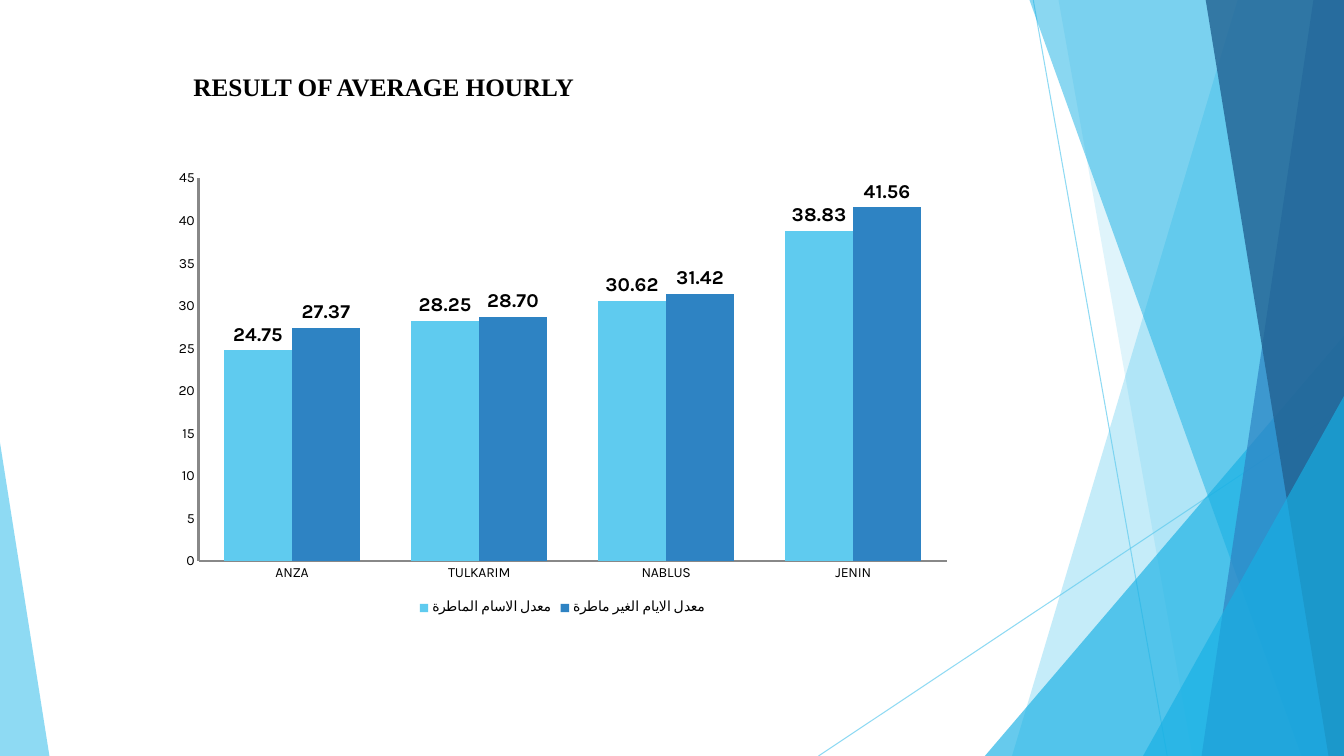
from dataclasses import dataclass

from pptx import Presentation
from pptx.chart.data import CategoryChartData
from pptx.dml.color import RGBColor
from pptx.enum.chart import XL_CHART_TYPE as ChartType
from pptx.enum.chart import XL_LABEL_POSITION as LabelPosition
from pptx.enum.chart import XL_LEGEND_POSITION as LegendPosition
from pptx.enum.chart import XL_TICK_MARK as TickMark
from pptx.enum.shapes import MSO_CONNECTOR as Connector
from pptx.enum.shapes import MSO_SHAPE as Shape
from pptx.enum.text import MSO_AUTO_SIZE as AutoSize
from pptx.oxml.ns import qn
from pptx.oxml.xmlchemy import BaseOxmlElement
from pptx.shapes.autoshape import Shape as AutoShape
from pptx.slide import Slide
from pptx.util import Emu, Inches, Pt

SKY = RGBColor(0x5F, 0xCB, 0xEF)
CYAN = RGBColor(0x17, 0xB0, 0xE4)
BLUE = RGBColor(0x2E, 0x83, 0xC3)
NAVY = RGBColor(0x22, 0x62, 0x92)
GRAY = RGBColor(0x88, 0x88, 0x88)
BLACK = RGBColor(0, 0, 0)

WIDTH, HEIGHT = Inches(13.33), Inches(7.5)
TITLE_FONT, CHART_FONT = "Times New Roman", "Karla"


@dataclass(frozen=True)
class Ray:
    start: tuple[float, float]
    end: tuple[float, float]


@dataclass(frozen=True)
class Facet:
    top_left: float
    bottom_left: float
    color: RGBColor
    opacity: int


@dataclass(frozen=True)
class Corner:
    left: float
    top: float
    width: float
    apex: float
    color: RGBColor
    opacity: int


@dataclass(frozen=True)
class Series:
    name: str
    values: tuple[float, ...]
    color: RGBColor


RAYS = (Ray((76.88, 0), (86.85, 100)), Ray((100, 53.73), (60.9, 100)))
PANELS = (
    Facet(92.1, 75.3, SKY, 36),
    Facet(78.75, 88.73, SKY, 20),
    Corner(73.28, 44.4, 26.72, 1, CYAN, 66),
    Facet(76.58, 96.83, CYAN, 50),
    Facet(97.73, 89.4, BLUE, 70),
    Facet(89.7, 98.85, NAVY, 80),
    Corner(85.05, 52.4, 14.95, 1, CYAN, 66),
    Corner(0, 58.53, 3.68, 0, SKY, 70),
)
CITIES = ("ANZA", "TULKARIM", "NABLUS", "JENIN")
SERIES = (
    Series("معدل الاسام الماطرة", (24.75, 28.25, 30.62, 38.83), SKY),
    Series("معدل الايام الغير ماطرة", (27.37, 28.7, 31.42, 41.56), BLUE),
)


def across(percent: float) -> Emu:
    return Emu(round(WIDTH * percent / 100))


def down(percent: float) -> Emu:
    return Emu(round(HEIGHT * percent / 100))


def set_opacity(element: BaseOxmlElement, percent: int) -> None:
    for color in element.iter(qn("a:srgbClr")):
        color.makeelement(qn("a:alpha"))
        alpha = color.makeelement(qn("a:alpha"), {"val": str(percent * 1000)})
        color.append(alpha)


def draw_ray(slide: Slide, ray: Ray) -> None:
    line = slide.shapes.add_connector(
        Connector.STRAIGHT,
        across(ray.start[0]), down(ray.start[1]),
        across(ray.end[0]), down(ray.end[1]),
    )
    line.line.color.rgb = SKY
    line.line.width = Pt(0.75)
    set_opacity(line.element, 70)
    properties = line.element.spPr
    properties.append(properties.makeelement(qn("a:effectLst")))


def add_facet(slide: Slide, facet: Facet) -> AutoShape:
    top, bottom = down(-0.1), down(100)
    builder = slide.shapes.build_freeform(across(facet.top_left), top)
    builder.add_line_segments(
        [(WIDTH, top), (WIDTH, bottom), (across(facet.bottom_left), bottom)],
        close=True,
    )
    return builder.convert_to_shape()


def add_corner(slide: Slide, corner: Corner) -> AutoShape:
    shape = slide.shapes.add_shape(
        Shape.ISOSCELES_TRIANGLE,
        across(corner.left), down(corner.top),
        across(corner.width), down(100 - corner.top),
    )
    shape.adjustments[0] = corner.apex
    return shape


def draw_panel(slide: Slide, panel: Facet | Corner) -> None:
    add = add_facet if isinstance(panel, Facet) else add_corner
    shape = add(slide, panel)
    shape.shadow.inherit = False
    shape.fill.solid()
    shape.fill.fore_color.rgb = panel.color
    shape.line.fill.background()
    set_opacity(shape.element, panel.opacity)


def draw_title(slide: Slide) -> None:
    box = slide.shapes.add_textbox(across(13.65), down(7.6), across(30.15), down(6.53))
    frame = box.text_frame
    frame.word_wrap = False
    frame.auto_size = AutoSize.SHAPE_TO_FIT_TEXT
    para = frame.paragraphs[0]
    para.text = "RESULT OF AVERAGE HOURLY"
    para.line_spacing = Pt(28)
    para.space_after = Pt(12)
    para.font.name = TITLE_FONT
    para.font.size = Pt(18)
    para.font.bold = True
    para.font.color.rgb = BLACK


def draw_chart(slide: Slide) -> None:
    data = CategoryChartData(number_format="General")
    data.categories = CITIES
    for series in SERIES:
        data.add_series(series.name, series.values)
    chart = slide.shapes.add_chart(
        ChartType.COLUMN_CLUSTERED,
        across(12.08), down(21.33), across(59.55), down(60.53), data,
    ).chart
    chart.has_title = False
    chart.font.name = CHART_FONT
    chart.font.size = Pt(10)
    chart.font.color.rgb = BLACK
    chart.has_legend = True
    chart.legend.position = LegendPosition.BOTTOM
    chart.legend.include_in_layout = False

    for axis in (chart.category_axis, chart.value_axis):
        axis.major_tick_mark = TickMark.NONE
        axis.minor_tick_mark = TickMark.NONE
        axis.has_major_gridlines = False
        axis.format.line.color.rgb = GRAY
        axis.format.line.width = Pt(1.5)
    chart.value_axis.minimum_scale = 0
    chart.value_axis.maximum_scale = 45
    chart.value_axis.major_unit = 5

    plot = chart.plots[0]
    plot.gap_width = 75
    plot.overlap = 0
    plot.vary_by_categories = False
    for bars, series in zip(plot.series, SERIES):
        bars.format.fill.solid()
        bars.format.fill.fore_color.rgb = series.color
        labels = bars.data_labels
        labels.show_value = True
        labels.number_format = "#,##0.00"
        labels.number_format_is_linked = False
        labels.position = LabelPosition.OUTSIDE_END
        labels.font.name = CHART_FONT
        labels.font.size = Pt(14)
        labels.font.bold = True
        labels.font.color.rgb = BLACK


def main() -> None:
    deck = Presentation()
    deck.slide_width, deck.slide_height = WIDTH, HEIGHT
    page = deck.slides.add_slide(deck.slide_layouts[6])
    for ray in RAYS:
        draw_ray(page, ray)
    for panel in PANELS:
        draw_panel(page, panel)
    draw_title(page)
    draw_chart(page)
    deck.save("out.pptx")


if __name__ == "__main__":
    main()
